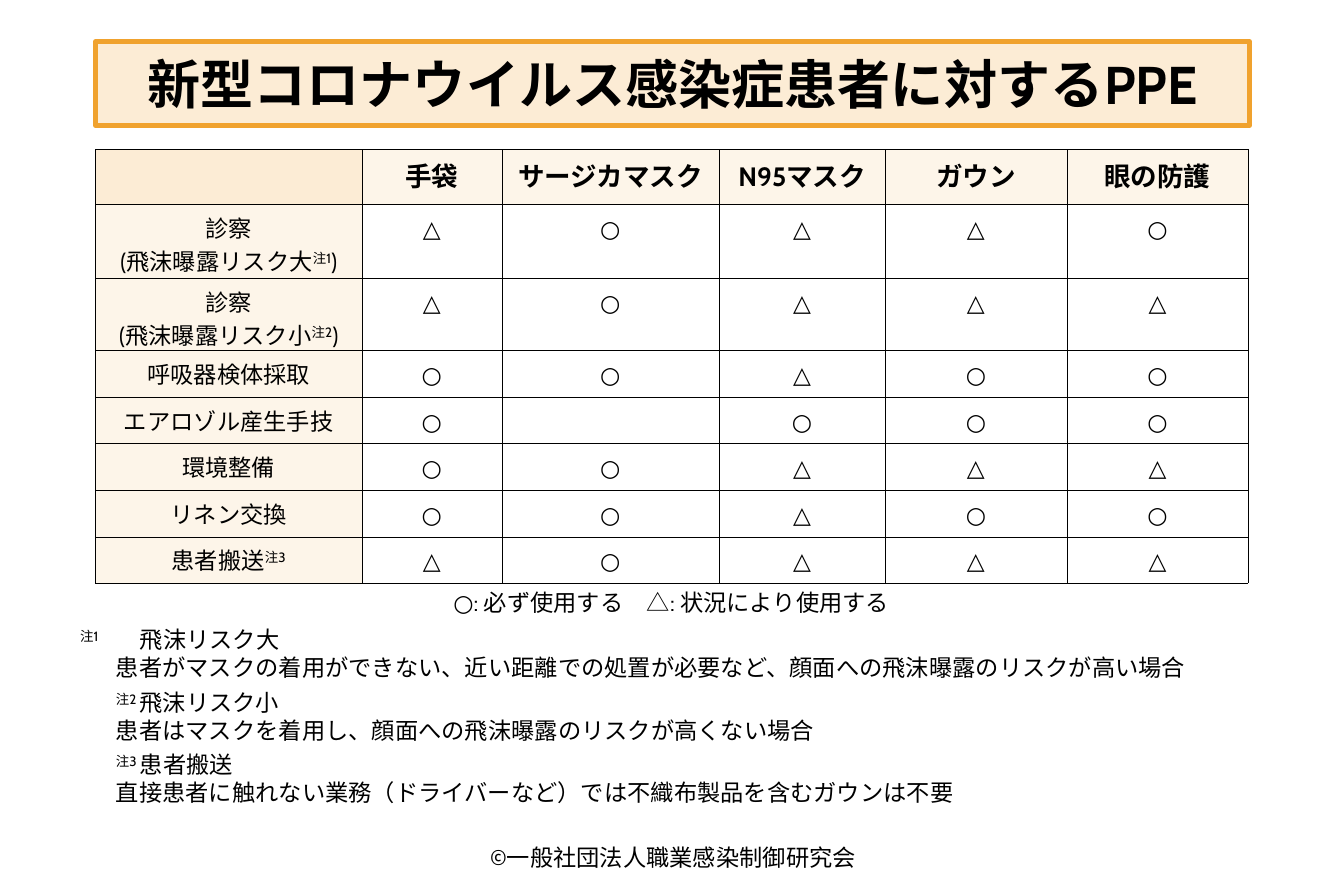
import pptx
import pptx.util
import pptx.dml.color
import pptx.enum.text
import pptx.oxml
import pptx.oxml.ns
from lxml import etree

# Content: text between carets is raised
TITLE = "新型コロナウイルス感染症患者に対するPPE"
HEADS = ["", "手袋", "サージカマスク", "N95マスク", "ガウン", "眼の防護"]
ROWS = [
    ("診察\n(飛沫曝露リスク大^注1^)", "△○△△○"),
    ("診察\n(飛沫曝露リスク小^注2^)", "△○△△△"),
    ("呼吸器検体採取", "○○△○○"),
    ("エアロゾル産生手技", "○ ○○○"),
    ("環境整備", "○○△△△"),
    ("リネン交換", "○○△○○"),
    ("患者搬送^注3^", "△○△△△"),
]
# Each note: text, left indent, space after
NOTES = [
    ("○: 必ず使用する　△: 状況により使用する", 0, 6),
    ("^注1\t^飛沫リスク大", 0, 0),
    ("患者がマスクの着用ができない、近い距離での処置が必要など、"
     "顔面への飛沫曝露のリスクが高い場合", 0.3, 4),
    ("^注2 ^飛沫リスク小", 0.3, 0),
    ("患者はマスクを着用し、顔面への飛沫曝露のリスクが高くない場合", 0.3, 4),
    ("^注3 ^患者搬送", 0.3, 0),
    ("直接患者に触れない業務（ドライバーなど）では不織布製品を含むガウンは不要", 0.3, 4),
]
CREDIT = "©一般社団法人職業感染制御研究会"
WIDTHS = [2.23, 1.17, 1.82, 1.39, 1.52, 1.52]
HEIGHTS = [0.46, 0.62, 0.6] + [0.39] * 5
FONT, INK, CREAM, AMBER = "Cabin", "000000", "FCECD5", "F0A22E"

Inches, Pt = pptx.util.Inches, pptx.util.Pt
ALIGN = pptx.enum.text.PP_ALIGN
ANCHOR = pptx.enum.text.MSO_ANCHOR
qn = pptx.oxml.ns.qn


def color(code):
    return pptx.dml.color.RGBColor.from_string(code)


def paint(fill, code):
    fill.solid()
    fill.fore_color.rgb = color(code)


def write(para, text, size, bold=False, align=ALIGN.CENTER):
    para.alignment = align
    for i, part in enumerate(text.split("^")):
        if not part:
            continue
        run = para.add_run()
        run.text = part
        font = run.font
        font.name, font.size, font.bold = FONT, Pt(size), bold
        font.color.rgb = color(INK)
        props = run._r.get_or_add_rPr()
        etree.SubElement(props, qn("a:ea")).set("typeface", FONT)
        if i % 2:
            props.set("baseline", "30000")


def place(shape, left, top, width, height):
    shape.left, shape.top = Inches(left), Inches(top)
    shape.width, shape.height = Inches(width), Inches(height)


def frame(shape, anchor):
    box = shape.text_frame
    box.word_wrap = True
    box.auto_size = pptx.enum.text.MSO_AUTO_SIZE.NONE
    box.vertical_anchor = anchor
    return box


def border(cell):
    props = cell._tc.get_or_add_tcPr()
    for i, side in enumerate(["lnL", "lnR", "lnT", "lnB"]):
        line = etree.Element(qn("a:" + side), w=str(Pt(0.23)))
        solid = etree.SubElement(line, qn("a:solidFill"))
        etree.SubElement(solid, qn("a:srgbClr"), val=INK)
        props.insert(i, line)


def fade(cell):
    tone = cell._tc.tcPr.find(".//" + qn("a:srgbClr"))
    etree.SubElement(tone, qn("a:alpha"), val="50000")


deck = pptx.Presentation()
deck.slide_width, deck.slide_height = Inches(11.25), Inches(7.5)
slide = deck.slides.add_slide(deck.slide_layouts[1])

# Title in a rounded frame
title = slide.shapes.title
place(title, 0.8, 0.35, 9.66, 0.7)
geom = etree.Element(qn("a:prstGeom"), prst="roundRect")
etree.SubElement(geom, qn("a:avLst"))
title._element.spPr.insert(1, geom)
paint(title.fill, CREAM)
title.line.color.rgb = color(AMBER)
title.line.width = Pt(3)
write(frame(title, ANCHOR.MIDDLE).paragraphs[0], TITLE, 32, True)

# Table of protective gear
grid = [HEADS] + [[name] + list(marks) for name, marks in ROWS]
table = slide.shapes.add_table(
    len(grid), len(HEADS), Inches(0.8), Inches(1.25),
    Inches(sum(WIDTHS)), Inches(sum(HEIGHTS))).table
table.first_row = table.horz_banding = False
for col, width in zip(table.columns, WIDTHS):
    col.width = Inches(width)
for row, height in zip(table.rows, HEIGHTS):
    row.height = Inches(height)
for r, items in enumerate(grid):
    for c, text in enumerate(items):
        cell = table.cell(r, c)
        cell.margin_bottom = 0
        if r and c:
            cell.fill.background()
        else:
            paint(cell.fill, CREAM)
            if r or c:
                fade(cell)
        border(cell)
        for i, line in enumerate(text.strip().split("\n")):
            box = cell.text_frame
            para = box.add_paragraph() if i else box.paragraphs[0]
            write(para, line, 14 if r else 16, not r or c > 0)
            para.line_spacing = 1.17
            if not line:
                etree.SubElement(para._p, qn("a:endParaRPr"), sz="1400")

# Legend and notes
body = slide.placeholders[1]
place(body, 0.57, 4.87, 10.1, 1.92)
box = frame(body, ANCHOR.TOP)
for i, (text, indent, after) in enumerate(NOTES):
    para = box.add_paragraph() if i else box.paragraphs[0]
    props = para._p.get_or_add_pPr()
    props.set("marL", str(Inches(indent)))
    props.set("indent", "0")
    etree.SubElement(props, qn("a:buNone"))
    tabs = etree.SubElement(props, qn("a:tabLst"))
    etree.SubElement(tabs, qn("a:tab"), pos=str(Inches(0.3)), algn="l")
    para.space_before, para.space_after = Pt(0), Pt(after)
    write(para, text, 14, align=ALIGN.LEFT if i else ALIGN.CENTER)

# Copyright line
credit = slide.shapes.add_textbox(
    Inches(2.82), Inches(7.01), Inches(5.63), Inches(0.33))
write(frame(credit, ANCHOR.TOP).paragraphs[0], CREDIT, 14)

deck.save("out.pptx")
